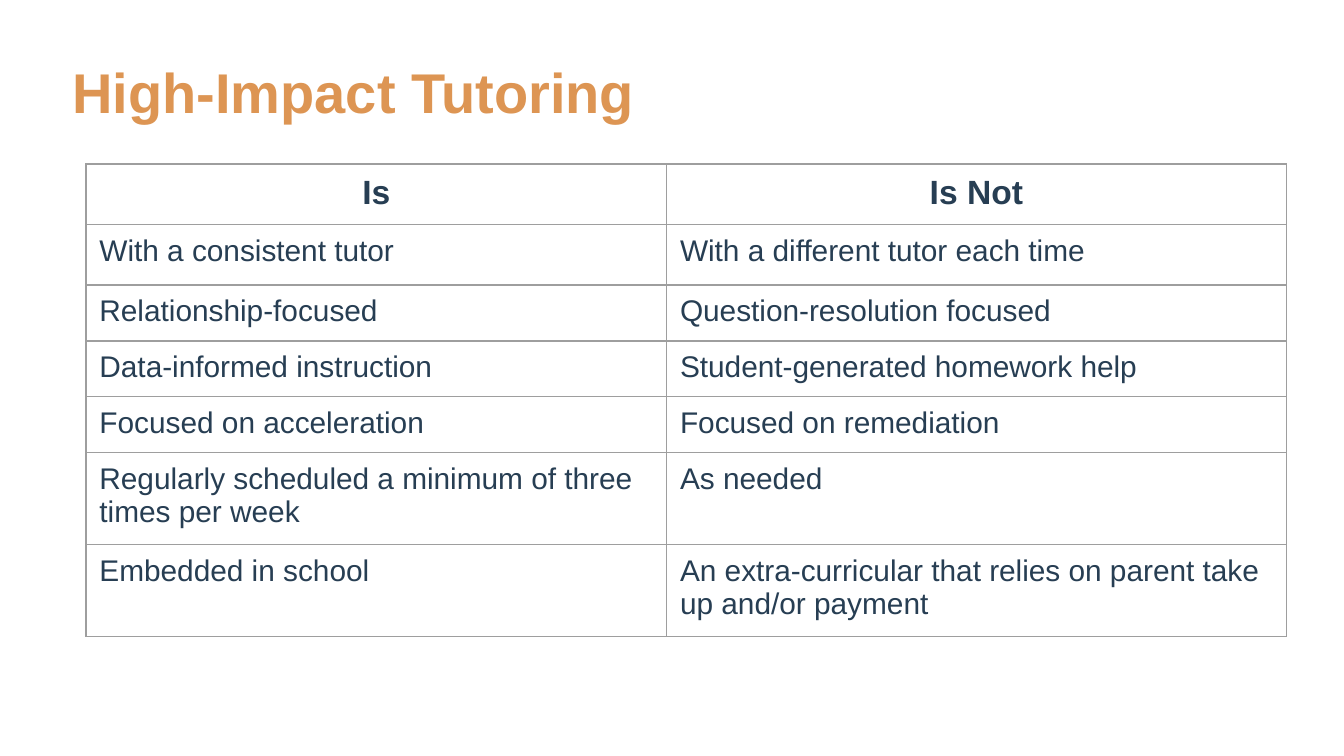
from lxml import etree
from pptx import Presentation
from pptx import util as u
from pptx.dml.color import RGBColor
from pptx.enum import text
from pptx.oxml import ns

FONT = "Arial"
ORANGE, NAVY, GRAY = "DD9553", "273E53", "9E9E9E"

TITLE = "High-Impact Tutoring"
ROWS = [
    ("Is", "Is Not"),
    ("With a consistent tutor", "With a different tutor each time"),
    ("Relationship-focused", "Question-resolution focused"),
    ("Data-informed instruction", "Student-generated homework help"),
    ("Focused on acceleration", "Focused on remediation"),
    ("Regularly scheduled a minimum of three times per week", "As needed"),
    ("Embedded in school",
     "An extra-curricular that relies on parent take up and/or payment"),
]
COLUMN_WIDTHS = [4.32, 4.61]
ROW_HEIGHTS = [0.38, 0.45, 0.38, 0.38, 0.38, 0.66, 0.66]


def color(value):
    return RGBColor.from_string(value)


def add_run(paragraph, words, size, value, bold=False):
    run = paragraph.add_run()
    run.text = words
    run.font.name = FONT
    run.font.size = u.Pt(size)
    run.font.bold = bold
    run.font.color.rgb = color(value)


def set_borders(cell, value, points):
    properties = cell._tc.get_or_add_tcPr()
    for position, side in enumerate(("lnL", "lnR", "lnT", "lnB")):
        line = etree.Element(ns.qn("a:" + side), w=str(u.Pt(points)))
        fill = etree.SubElement(line, ns.qn("a:solidFill"))
        etree.SubElement(fill, ns.qn("a:srgbClr"), val=value)
        properties.insert(position, line)


def set_margins(item, horizontal, vertical):
    item.margin_left = item.margin_right = horizontal
    item.margin_top = item.margin_bottom = vertical


# Widescreen page, 16 to 9
presentation = Presentation()
presentation.slide_width = u.Inches(10)
presentation.slide_height = u.Inches(10 * 9 / 16)
slide = presentation.slides.add_slide(presentation.slide_layouts[6])

# Title
title = slide.shapes.add_textbox(
    u.Inches(0.54), u.Inches(0.43), u.Inches(9.14), u.Inches(0.4))
title.text_frame.word_wrap = True
set_margins(title.text_frame, 0, 0)
add_run(title.text_frame.paragraphs[0], TITLE, 30, ORANGE, bold=True)

# Comparison table
table = slide.shapes.add_table(
    len(ROWS), len(COLUMN_WIDTHS), u.Inches(0.64), u.Inches(1.22),
    u.Inches(sum(COLUMN_WIDTHS)), u.Inches(sum(ROW_HEIGHTS))).table
table.horz_banding = False
table.first_row = False
for column, width in zip(table.columns, COLUMN_WIDTHS):
    column.width = u.Inches(width)

for index, (row, height, entries) in enumerate(zip(table.rows, ROW_HEIGHTS, ROWS)):
    row.height = u.Inches(height)
    header = index == 0
    for cell, words in zip(row.cells, entries):
        cell.fill.background()
        set_borders(cell, GRAY, 0.75)
        set_margins(cell, u.Inches(0.1), u.Pt(5.4))
        paragraph = cell.text_frame.paragraphs[0]
        if header:
            paragraph.alignment = text.PP_ALIGN.CENTER
        add_run(paragraph, words, 18 if header else 16, NAVY, bold=header)

presentation.save("out.pptx")
